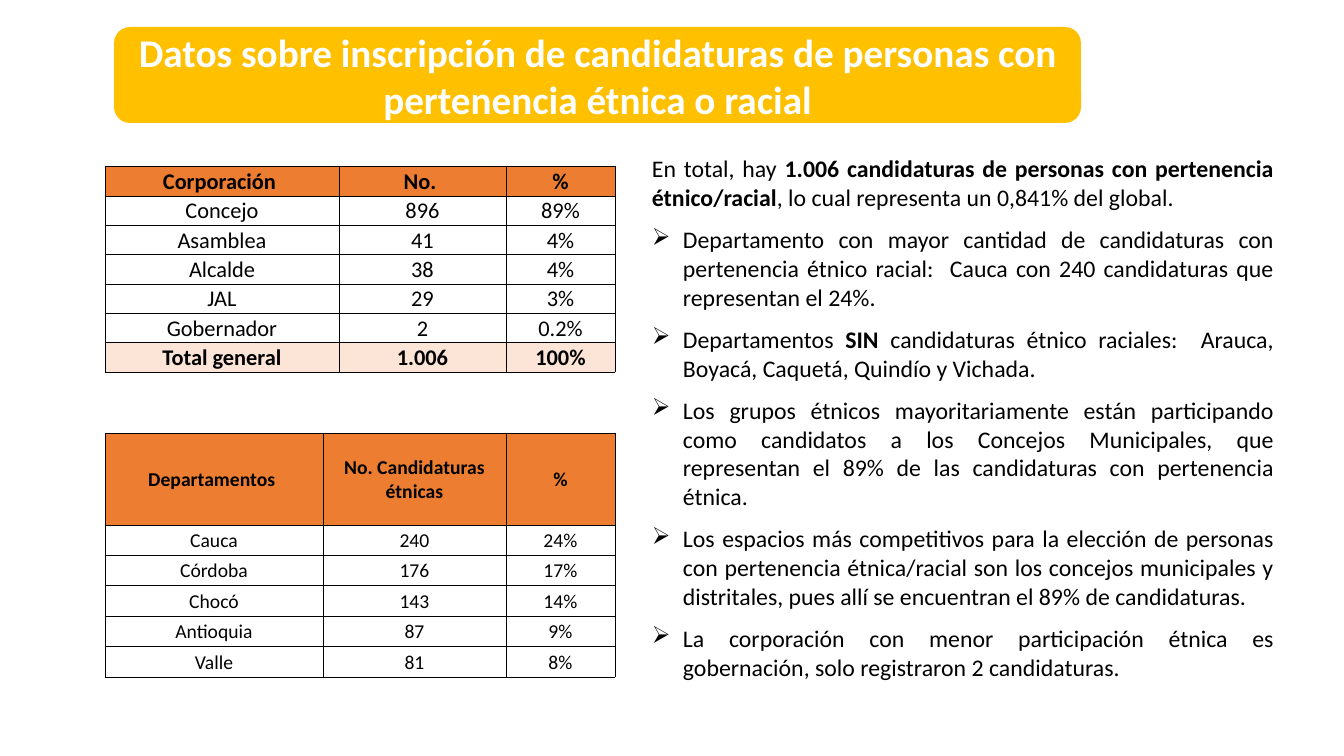
from pptx import Presentation
from pptx import util as u
from pptx.dml.color import RGBColor
from pptx.enum import shapes, text
from pptx.oxml import parse_xml
from pptx.oxml.ns import nsdecls

SCALE = 914400 / 100.8
FONT = "Calibri"
HUES = {"gold": "FFC000", "orange": "ED7D31", "peach": "FCE4D6",
        "black": "000000", "white": "FFFFFF"}


def px(*sizes):
    return [u.Emu(round(size * SCALE)) for size in sizes]


def style(para, size, hue, bold, align):
    para.alignment = align
    para.font.name = FONT
    para.font.size = u.Pt(size)
    para.font.bold = bold
    para.font.color.rgb = RGBColor.from_string(HUES[hue])


deck = Presentation()
deck.slide_width, deck.slide_height = px(1344, 756)
slide = deck.slides.add_slide(deck.slide_layouts[6])

body = slide.shapes.add_textbox(*px(642, 149, 642, 614)).text_frame
body.word_wrap = True
points = [
    ["En total, hay ", "1.006 candidaturas de personas con pertenencia étnico/racial",
     ", lo cual representa un 0,841% del global. "],
    ["Departamento con mayor cantidad de candidaturas con pertenencia étnico racial:  "
     "Cauca con 240 candidaturas que representan el 24%."],
    ["Departamentos ", "SIN",
     " candidaturas étnico raciales:  Arauca, Boyacá, Caquetá, Quindío y Vichada."],
    ["Los grupos étnicos mayoritariamente están participando como candidatos a los "
     "Concejos Municipales, que representan el 89% de las candidaturas con "
     "pertenencia étnica. "],
    ["Los espacios más competitivos para la elección de personas con pertenencia "
     "étnica/racial son los concejos municipales y distritales, pues allí se "
     "encuentran el 89% de candidaturas."],
    ["La corporación con menor participación étnica es gobernación, solo registraron "
     "2 candidaturas. "],
]
indent = px(31)[0]
for i, parts in enumerate(points):
    para = body.add_paragraph() if i else body.paragraphs[0]
    para.space_after = u.Pt(5)
    if i:
        para.space_before = u.Pt(5)
        props = para._p.get_or_add_pPr()
        props.set("marL", str(indent))
        props.set("indent", str(-indent))
        props.append(parse_xml(f'<a:buChar {nsdecls("a")} char="➢"/>'))
    style(para, 17, "black", False, text.PP_ALIGN.JUSTIFY)
    for j, part in enumerate(parts):
        run = para.add_run()
        run.text = part
        if j == 1:
            run.font.bold = True

banner = slide.shapes.add_shape(
    shapes.MSO_SHAPE.ROUNDED_RECTANGLE, *px(114, 27, 967, 96))
banner.shadow.inherit = False
banner.fill.solid()
banner.fill.fore_color.rgb = RGBColor.from_string(HUES["gold"])
banner.line.fill.background()
title = banner.text_frame
title.word_wrap = True
title.vertical_anchor = text.MSO_ANCHOR.MIDDLE
title.text = ("Datos sobre inscripción de candidaturas de personas con "
              "pertenencia étnica o racial")
style(title.paragraphs[0], 28, "white", True, text.PP_ALIGN.CENTER)

bodies = [
    ["Corporación |No. |%", "Concejo|896|89%", "Asamblea|41|4%", "Alcalde|38|4%",
     "JAL|29|3%", "Gobernador|2|0.2%", "Total general|1.006|100%"],
]
regions = ["Departamentos |No. Candidaturas étnicas|%", "Cauca|240|24%",
           "Córdoba|176|17%", "Chocó|143|14%", "Antioquia|87|9%", "Valle|81|8%"]
grids = [
    (166, 206, 30, [234, 167, 109], 16, bodies[0]),
    (433, 244, 92, [218, 183, 109], 14, regions),
]
for top, tall, head, widths, size, lines in grids:
    rows = [line.split("|") for line in lines]
    table = slide.shapes.add_table(
        len(rows), 3, *px(105, top, sum(widths), tall)).table
    table.first_row = table.horz_banding = False
    for col, width in zip(table.columns, px(*widths)):
        col.width = width
    for r, row in enumerate(rows):
        step = (tall - head) / (len(rows) - 1)
        table.rows[r].height = px(step if r else head)[0]
        total = row[0] == "Total general"
        for c, word in enumerate(row):
            cell = table.cell(r, c)
            cell.margin_left, cell.margin_top, cell.margin_right = px(1, 1, 1)
            cell.margin_bottom = 0
            cell.vertical_anchor = text.MSO_ANCHOR.MIDDLE
            cell.text = word
            style(cell.text_frame.paragraphs[0], size, "black",
                  r == 0 or total, text.PP_ALIGN.CENTER)
            for side in "LRTB":
                cell._tc.get_or_add_tcPr().append(parse_xml(
                    f'<a:ln{side} {nsdecls("a")} w="6350"><a:solidFill>'
                    f'<a:srgbClr val="{HUES["black"]}"/></a:solidFill></a:ln{side}>'))
            if r == 0 or total:
                cell.fill.solid()
                cell.fill.fore_color.rgb = RGBColor.from_string(
                    HUES["peach" if total else "orange"])
            else:
                cell.fill.background()

deck.save("out.pptx")
